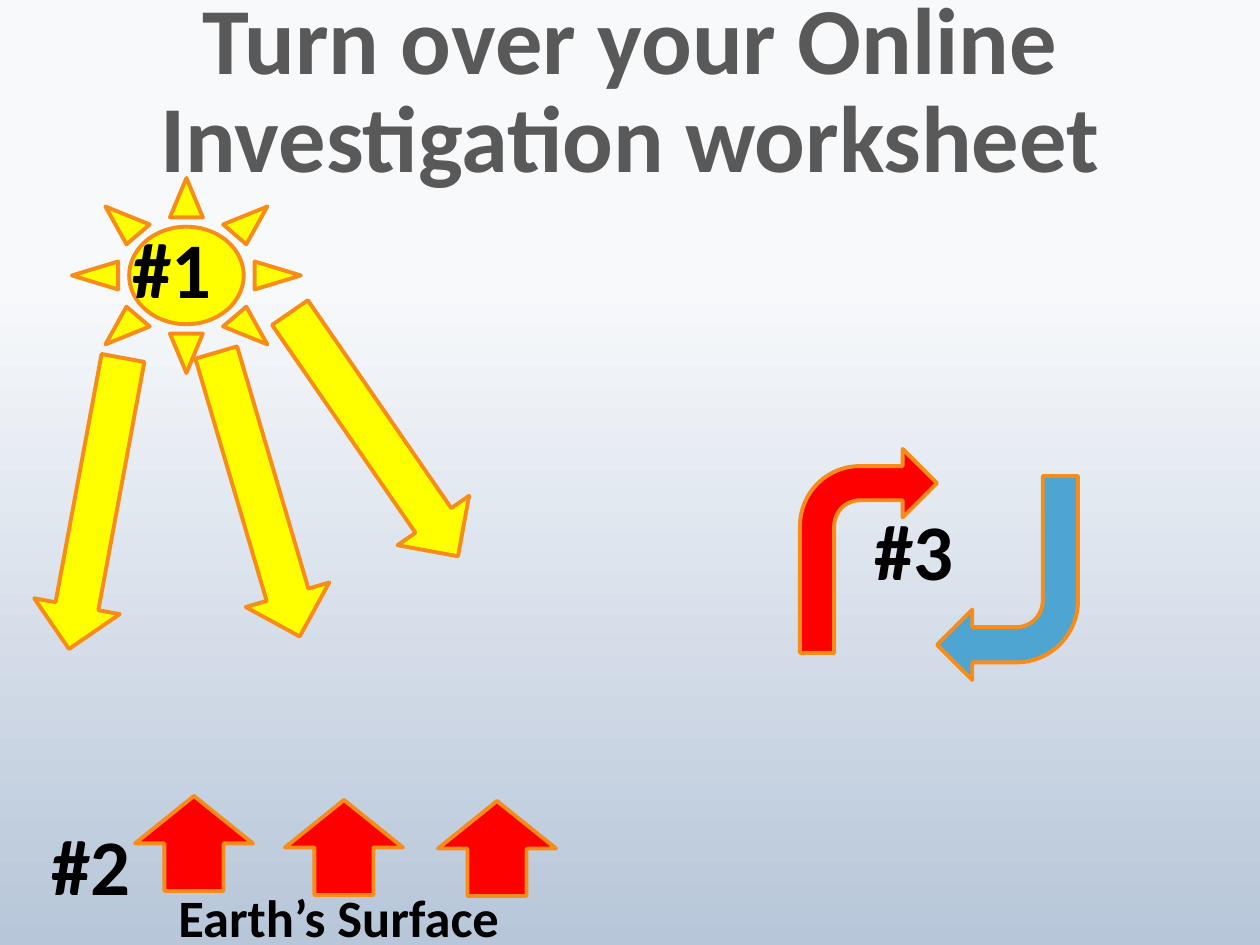
from pptx import Presentation, util as u
from pptx.dml.color import RGBColor
from pptx.enum import shapes, text

PX = 914400 / 126
COLORS = {
    "sky": "F7F9FB", "haze": "B7C6D9", "title": "595959", "ink": "000000",
    "sun": "FFFF00", "warm": "FF0000", "cool": "4EA5D1", "edge": "F78D18",
}
KINDS = shapes.MSO_SHAPE


def px(*lengths):
    return [u.Emu(round(n * PX)) for n in lengths]


def color(name):
    return RGBColor.from_string(COLORS[name])


def apply(target, values):
    for name, value in values.items():
        setattr(target, name, value)


class Painter:
    font = {"name": "Calibri", "bold": True}
    outline = u.Pt(2.25)

    def __init__(self, page):
        self.page = page

    def background(self, *stops):
        fill = self.page.background.fill
        fill.gradient()
        fill.gradient_angle = 270
        for stop, (name, position) in zip(fill.gradient_stops, stops):
            stop.color.rgb = color(name)
            stop.position = position

    def shape(self, kind, box, fill, rotation=0):
        item = self.page.shapes.add_shape(kind, *px(*box))
        item.rotation = rotation
        item.shadow.inherit = False
        item.fill.solid()
        item.fill.fore_color.rgb = color(fill)
        item.line.color.rgb = color("edge")
        item.line.width = self.outline

    def label(self, words, box, size, ink="ink", frame=None, para=None):
        item = self.page.shapes.add_textbox(*px(*box)).text_frame
        apply(item, {"word_wrap": True, **(frame or {})})
        line = item.paragraphs[0]
        apply(line, para or {})
        span = line.add_run()
        span.text = words
        apply(span.font, {**self.font, "size": u.Pt(size)})
        span.font.color.rgb = color(ink)


def main():
    deck = Presentation()
    deck.slide_width, deck.slide_height = px(1260, 945)
    painter = Painter(deck.slides.add_slide(deck.slide_layouts[6]))
    painter.background(("sky", 0.3), ("haze", 1))

    # Title
    painter.label(
        "Turn over your Online Investigation worksheet", (0, 6, 1260, 174), 54, "title",
        {"vertical_anchor": text.MSO_ANCHOR.MIDDLE},
        {"alignment": text.PP_ALIGN.CENTER, "line_spacing": u.Pt(56)})

    # Sun and convection arrows
    painter.shape(KINDS.SUN, (72, 178, 229, 195), "sun")
    painter.shape(KINDS.BENT_ARROW, (800, 449, 137, 204), "warm")
    painter.shape(KINDS.BENT_ARROW, (937, 476, 141, 204), "cool", 180)

    # Sun rays
    for left, top, angle in ((110, 451, 73.6), (226, 391, 55.4), (-52, 460, 100.5)):
        painter.shape(KINDS.RIGHT_ARROW, (left, top, 296, 87), "sun", angle)

    # Heat rising from the ground
    for left, top in ((135, 796), (285, 800), (438, 801)):
        painter.shape(KINDS.UP_ARROW, (left, top, 118, 95), "warm")

    # Labels
    grow = {"auto_size": text.MSO_AUTO_SIZE.SHAPE_TO_FIT_TEXT}
    painter.label("Earth’s Surface", (166, 879, 465, 77), 30, frame=grow)
    for words, left, top in (("#1", 120, 214), ("#2", 39, 811), ("#3", 862, 496)):
        painter.label(words, (left, top, 152, 108), 45, frame=grow)

    deck.save("out.pptx")


if __name__ == "__main__":
    main()
